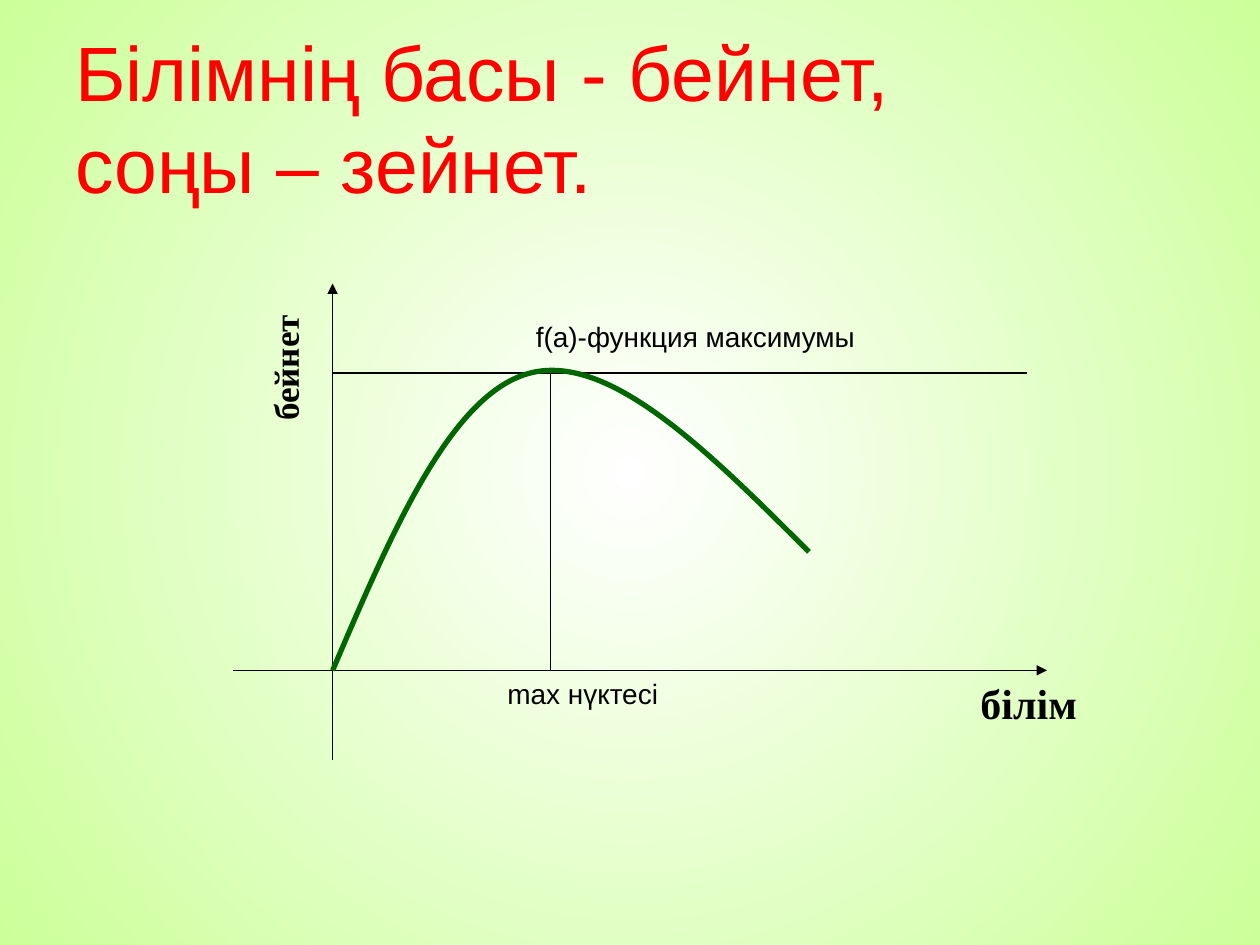
from lxml.etree import SubElement
from pptx import Presentation
from pptx.dml.color import RGBColor
from pptx.enum.shapes import MSO_CONNECTOR
from pptx.enum.text import MSO_ANCHOR, PP_ALIGN
from pptx.oxml.ns import qn
from pptx.util import Inches, Pt

BLACK = RGBColor(0x00, 0x00, 0x00)
RED = RGBColor(0xFF, 0x00, 0x00)
GREEN = RGBColor(0x00, 0x66, 0x00)
WHITE = RGBColor(0xFF, 0xFF, 0xFF)
LIME = RGBColor(0xCC, 0xFF, 0x99)


def paint_background(slide):
    fill = slide.background.fill
    fill.gradient()
    for stop, color, position in zip(fill.gradient_stops, (WHITE, LIME), (0, 1)):
        stop.color.rgb = color
        stop.position = position
    gradient = slide.background._cSld.find(".//" + qn("a:gradFill"))
    gradient.remove(gradient.find(qn("a:lin")))
    circle = SubElement(gradient, qn("a:path"), {"path": "circle"})
    SubElement(circle, qn("a:fillToRect"), dict.fromkeys("ltrb", "50000"))


def add_text(slide, box, lines, size, color=BLACK, font="Arial", bold=False,
             align=PP_ALIGN.CENTER, anchor=MSO_ANCHOR.TOP):
    shape = slide.shapes.add_textbox(*map(Inches, box))
    frame = shape.text_frame
    frame.word_wrap = True
    frame.vertical_anchor = anchor
    paragraph = frame.paragraphs[0]
    paragraph.alignment = align
    for index, line in enumerate(lines):
        if index:
            paragraph.add_line_break()
        run = paragraph.add_run()
        run.text = line
        run.font.name = font
        run.font.size = Pt(size)
        run.font.bold = bold
        run.font.color.rgb = color
    return shape


def add_line(slide, start, end, arrow=False):
    connector = slide.shapes.add_connector(
        MSO_CONNECTOR.STRAIGHT, *map(Inches, (*start, *end)))
    connector.line.color.rgb = BLACK
    connector.line.width = Pt(0.75)
    properties = connector._element.spPr
    if arrow:
        SubElement(properties.find(qn("a:ln")), qn("a:tailEnd"), {"type": "triangle"})
    SubElement(properties, qn("a:effectLst"))


def add_curve(slide, points):
    start, *controls = [tuple(map(Inches, point)) for point in points]
    builder = slide.shapes.build_freeform(*start)
    builder.add_line_segments(controls, close=False)
    shape = builder.convert_to_shape()
    shape.shadow.inherit = False
    shape.fill.background()
    shape.line.color.rgb = GREEN
    shape.line.width = Pt(3)
    outline = shape._element.spPr.find(".//" + qn("a:path"))
    segments = outline.findall(qn("a:lnTo"))
    for first in range(0, len(segments), 3):
        bezier = SubElement(outline, qn("a:cubicBezTo"))
        for segment in segments[first:first + 3]:
            bezier.append(segment[0])
            outline.remove(segment)


def add_title(slide, box):
    add_text(slide, box, ["Білімнің басы - бейнет, ", "соңы – зейнет."], 44, RED,
             align=PP_ALIGN.LEFT, anchor=MSO_ANCHOR.MIDDLE)


def add_graph(slide, box):
    left, top, width, height = box
    right, bottom = left + width, top + height
    origin_x, origin_y = left + 0.79, top + 3.07
    peak_x, peak_y = left + 2.52, top + 0.71

    add_line(slide, (left, origin_y), (right, origin_y), arrow=True)
    add_line(slide, (origin_x, bottom), (origin_x, top), arrow=True)
    add_line(slide, (origin_x, peak_y), (right - 0.16, peak_y))
    offsets = [(0, 0), (0.47, 1.1), (0.94, 2.2), (1.57, 2.36),
               (2.2, 2.52), (2.99, 1.73), (3.78, 0.94)]
    add_curve(slide, [(origin_x + x, origin_y - y) for x, y in offsets])
    add_line(slide, (peak_x, peak_y), (peak_x, origin_y))

    add_text(slide, (left + 4.98, origin_y + 0.01, 2.67, 0.51), ["білім"], 24,
             font="Times New Roman", bold=True)
    add_text(slide, (left + 2.07, origin_y, 1.41, 0.37), ["max нүктесі"], 16)
    add_text(slide, (left + 2.28, top + 0.24, 2.78, 0.37),
             ["f(a)-функция максимумы"], 16)
    effort = add_text(slide, (left - 0.2, top + 0.4, 1.33, 0.54), ["бейнет"], 20,
                      font="Times New Roman", bold=True)
    effort.rotation = 270


def main():
    presentation = Presentation()
    presentation.slide_width = Inches(10)
    presentation.slide_height = Inches(7.5)
    slide = presentation.slides.add_slide(presentation.slide_layouts[6])
    paint_background(slide)
    add_title(slide, (0.5, 0.3, 9, 1.25))
    add_graph(slide, (1.85, 2.25, 6.46, 3.78))
    presentation.save("out.pptx")


if __name__ == "__main__":
    main()
